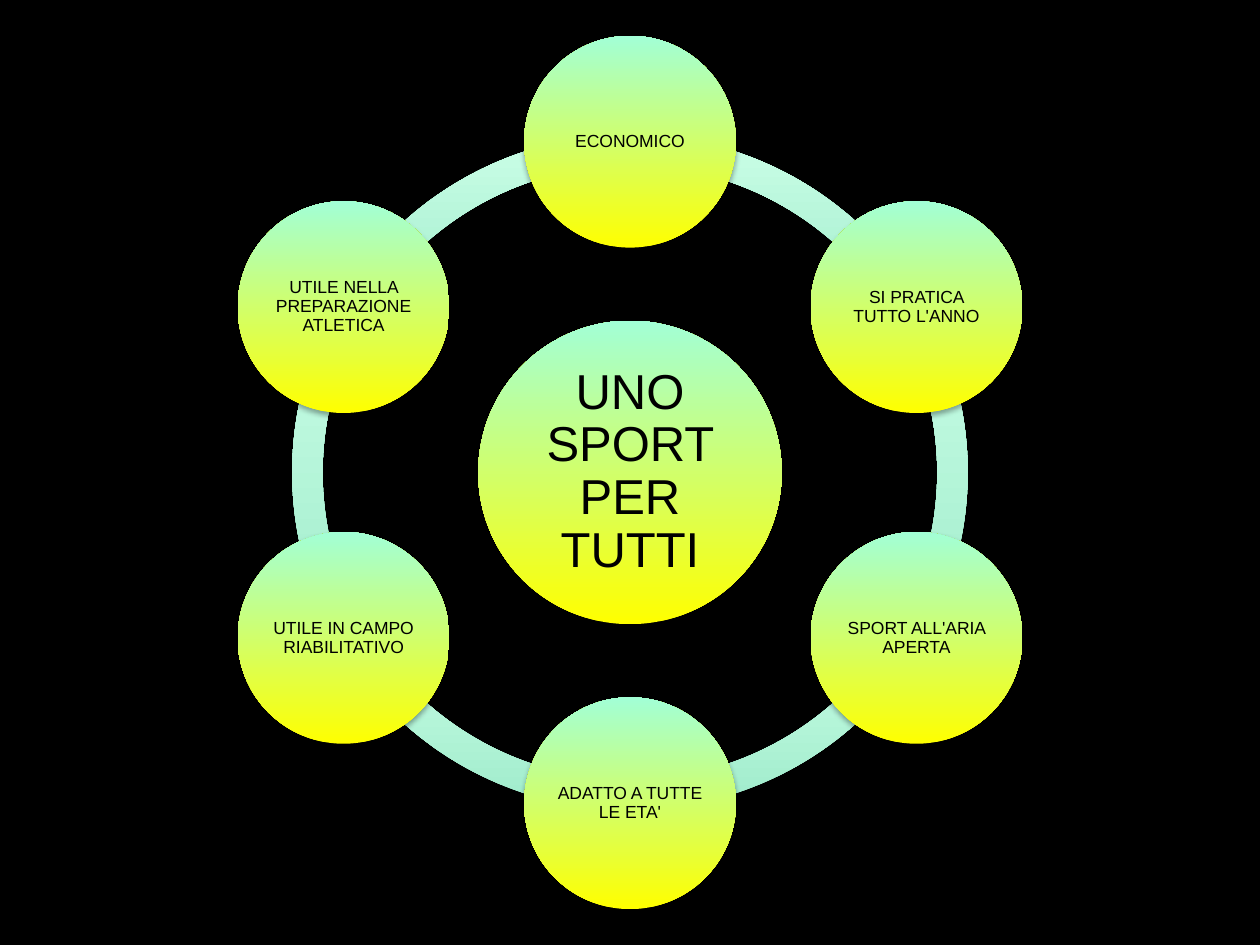
from math import cos, radians, sin, tan

from lxml.etree import SubElement
from pptx import Presentation
from pptx.dml.color import RGBColor
from pptx.enum.shapes import MSO_SHAPE
from pptx.enum.text import MSO_ANCHOR, MSO_AUTO_SIZE, PP_ALIGN
from pptx.oxml.ns import qn
from pptx.util import Pt


class Theme:
    back = "000000"
    ink = "000000"
    ball = ("FFFF00", "A2FFD6")
    band = ("9FEBCB", "CBFFE7")
    font = "Arial"
    large = 28
    small = 10


MID = (360, 270)
ORBIT = 189
OUTER, INNER = 193, 175.6
HUB, NODE = 173.4, 121
STEP = 60
TITLE = "UNO SPORT PER TUTTI"
LABELS = [
    ("ECONOMICO", 1),
    ("SI PRATICA TUTTO L'ANNO", 2),
    ("SPORT ALL'ARIA APERTA", 2),
    ("ADATTO A TUTTE LE ETA'", 2),
    ("UTILE IN CAMPO RIABILITATIVO", 2),
    ("UTILE NELLA PREPARAZIONE ATLETICA", 3),
]


def polar(radius, angle):
    """Point at a clockwise angle from the top of the ring."""
    turn = radians(angle)
    return MID[0] + radius * sin(turn), MID[1] - radius * cos(turn)


def bend(radius, start, end):
    """Two control points and the end point of a circular curve."""
    pull = 4 / 3 * tan(radians(end - start) / 4)

    def lean(angle, sign):
        x, y = polar(radius, angle)
        turn = radians(angle)
        return (x + sign * pull * radius * cos(turn),
                y + sign * pull * radius * sin(turn))

    return lean(start, 1), lean(end, -1), polar(radius, end)


def write(frame, text, size, color, font, inset, before):
    frame.word_wrap = True
    frame.auto_size = MSO_AUTO_SIZE.SHAPE_TO_FIT_TEXT
    frame.vertical_anchor = MSO_ANCHOR.MIDDLE
    frame.margin_left = frame.margin_right = Pt(inset)
    frame.margin_top = frame.margin_bottom = Pt(inset)
    para = frame.paragraphs[0]
    para.alignment = PP_ALIGN.CENTER
    para.line_spacing = 0.9
    para.space_before = Pt(before)
    run = para.add_run()
    run.text = text
    run.font.size = Pt(size)
    run.font.name = font
    run.font.color.rgb = RGBColor.from_string(color)


class Board:
    def __init__(self, slide, theme):
        self.slide = slide
        self.theme = theme
        fill = slide.background.fill
        fill.solid()
        fill.fore_color.rgb = RGBColor.from_string(theme.back)

    def paint(self, shape, colors):
        """Apply an upward gradient and a soft shadow, without outline."""
        shape.fill.gradient()
        shape.fill.gradient_angle = 90
        for stop, color in zip(shape.fill.gradient_stops, colors):
            stop.color.rgb = RGBColor.from_string(color)
        shape.line.fill.background()
        shape.shadow.inherit = False
        effects = shape._element.spPr.find(qn("a:effectLst"))
        shadow = SubElement(effects, qn("a:outerShdw"), blurRad=str(Pt(3)),
                            dist=str(Pt(1.8)), dir="5400000", rotWithShape="0")
        tint = SubElement(shadow, qn("a:srgbClr"), val="000000")
        SubElement(tint, qn("a:alpha"), val="35000")

    def arc(self, start):
        """Draw one ring segment, clockwise from the start angle."""
        end, half = start + STEP, start + STEP / 2
        edge = [polar(OUTER, a) for a in (start, half, end)]
        edge += [polar(INNER, a) for a in (end, half, start)]
        points = [(Pt(x), Pt(y)) for x, y in edge]
        pen = self.slide.shapes.build_freeform(*points[0])
        pen.add_line_segments(points[1:], close=True)
        shape = pen.convert_to_shape()
        lines = list(shape._element.iter(qn("a:lnTo")))
        self.curve(shape, lines[0:2], bend(OUTER, start, end))
        self.curve(shape, lines[3:5], bend(INNER, end, start))
        self.paint(shape, self.theme.band)

    def curve(self, shape, lines, points):
        """Put one curve in the place of two straight lines."""
        outline = lines[0].getparent()
        cubic = SubElement(outline, qn("a:cubicBezTo"))
        for x, y in points:
            SubElement(cubic, qn("a:pt"), x=str(Pt(x) - shape.left),
                       y=str(Pt(y) - shape.top))
        outline.replace(lines[0], cubic)
        outline.remove(lines[1])

    def ball(self, center, width):
        x, y = center
        shape = self.slide.shapes.add_shape(
            MSO_SHAPE.OVAL, Pt(x - width / 2), Pt(y - width / 2),
            Pt(width), Pt(width))
        self.paint(shape, self.theme.ball)

    def label(self, center, width, height, text, size, inset, before):
        x, y = center
        box = self.slide.shapes.add_textbox(
            Pt(x - width / 2), Pt(y - height / 2), Pt(width), Pt(height))
        write(box.text_frame, text, size=size, color=self.theme.ink,
              font=self.theme.font, inset=inset, before=before)


def main():
    deck = Presentation()
    deck.slide_width, deck.slide_height = Pt(720), Pt(540)
    board = Board(deck.slides.add_slide(deck.slide_layouts[6]), Theme)
    for start in range(300, -1, -STEP):
        board.arc(start)
    board.ball(MID, HUB)
    board.label(MID, 122.6, 123, TITLE, Theme.large, inset=2.8, before=11)
    for i, (text, lines) in enumerate(LABELS):
        spot = polar(ORBIT, i * STEP)
        board.ball(spot, NODE)
        board.label(spot, 85.6, 3.2 + 9.7 * lines, text, Theme.small,
                    inset=1, before=4)
    deck.save("out.pptx")


if __name__ == "__main__":
    main()
